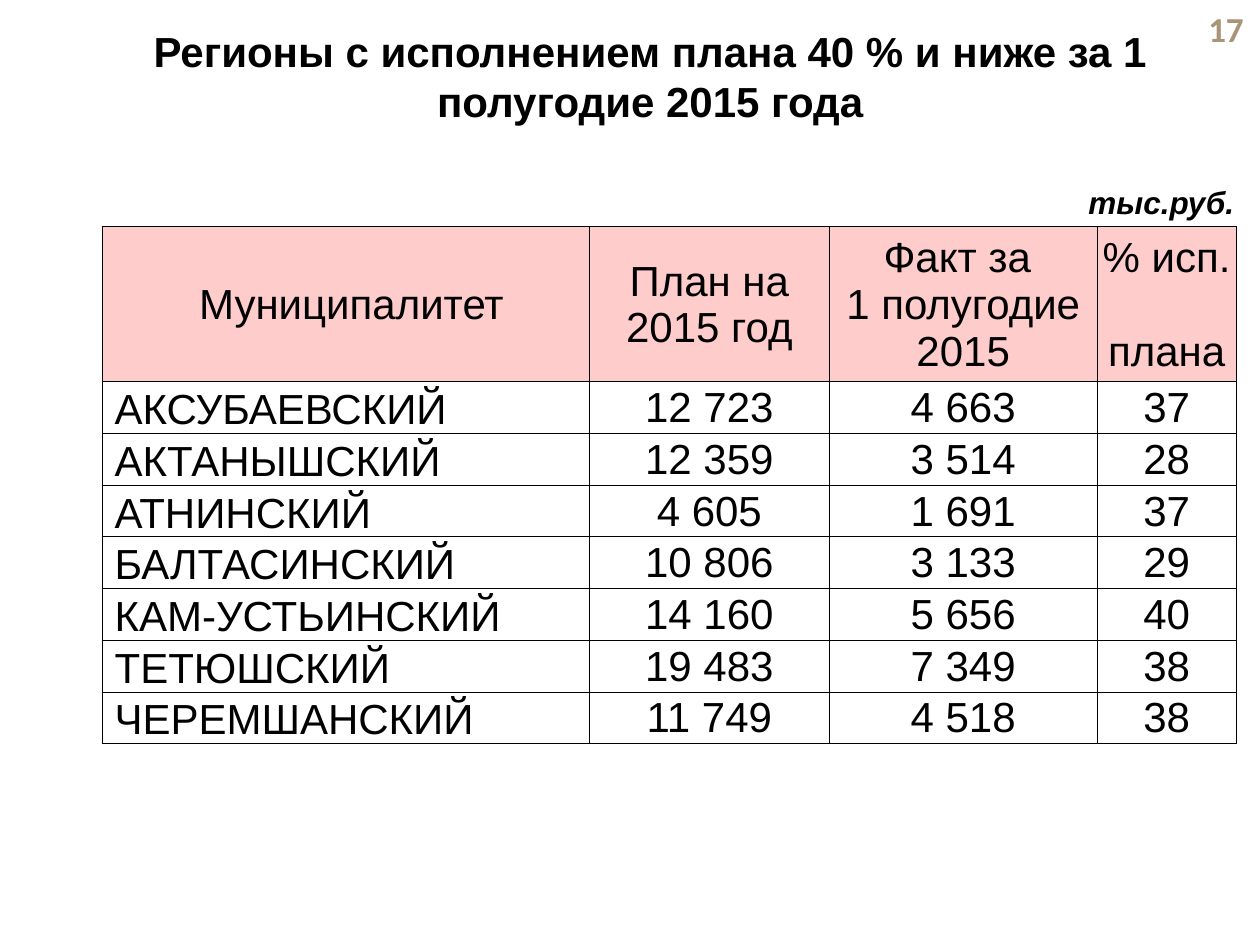
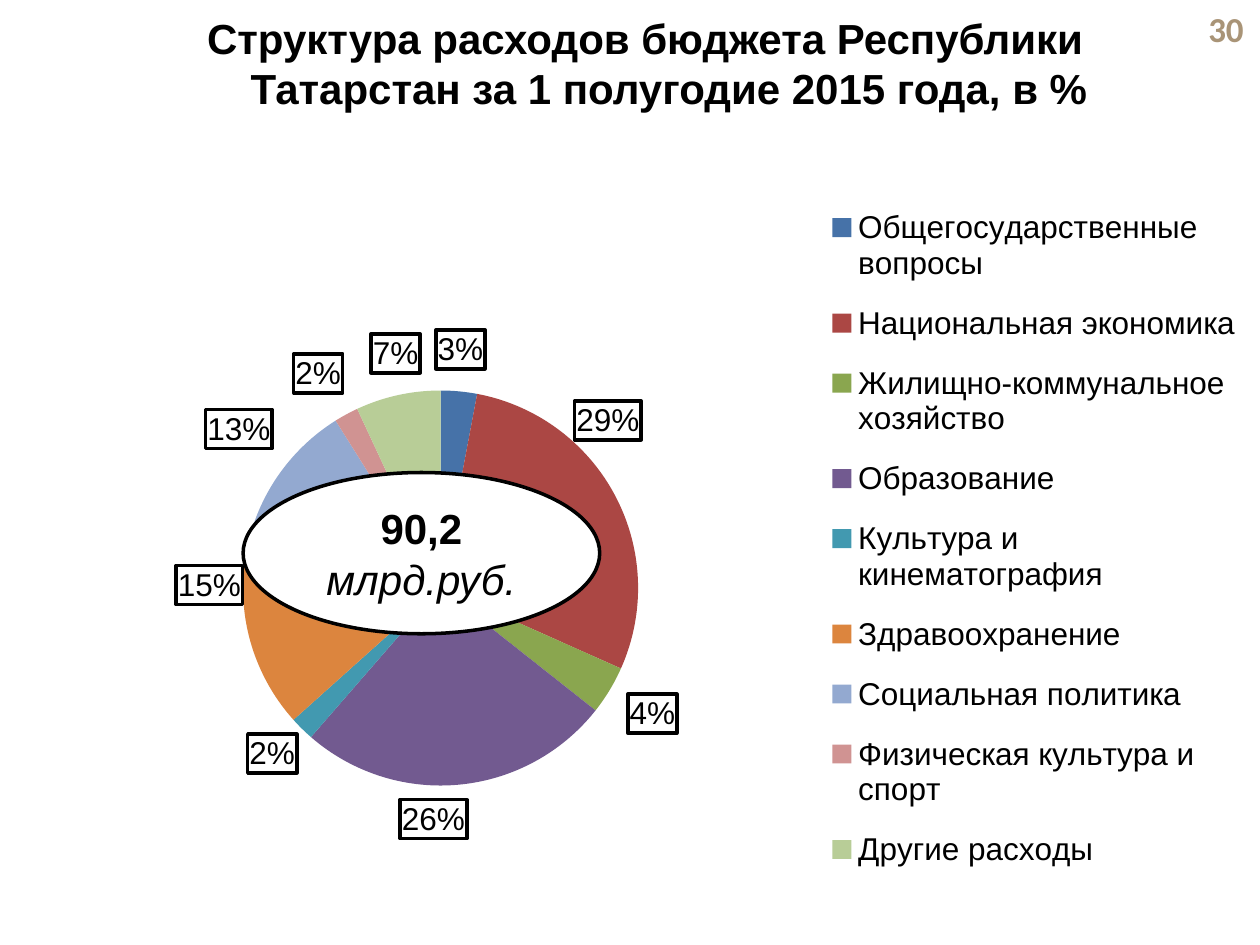
from dataclasses import dataclass

from pptx import Presentation
from pptx.chart.data import CategoryChartData
from pptx.dml.color import RGBColor
from pptx.enum import chart as charts, shapes, text
from pptx.oxml import parse_xml
from pptx.oxml.ns import nsdecls, qn
from pptx.util import Inches, Pt


@dataclass(frozen=True)
class Theme:
    font: str = "Arial"
    page_font: str = "Calibri"
    ink: str = "000000"
    paper: str = "FFFFFF"
    head: str = "FFCCCC"
    page: str = "A99477"
    big: int = 24
    mid: int = 20
    small: int = 18
    slices: tuple = ("4672A8", "AB4744", "8AA64F", "725A90", "4299B0",
                     "DC853E", "93A9D0", "D09392", "B8CD97")


THEME = Theme()
CENTER, RIGHT = text.PP_ALIGN.CENTER, text.PP_ALIGN.RIGHT
MIDDLE, BOTTOM = text.MSO_ANCHOR.MIDDLE, text.MSO_ANCHOR.BOTTOM

HEADS = ("Муниципалитет", "План на 2015 год",
         "Факт за \v1 полугодие 2015", "% исп. \vплана")
REGIONS = (
    ("АКСУБАЕВСКИЙ", "12 723", "4 663", "37"),
    ("АКТАНЫШСКИЙ", "12 359", "3 514", "28"),
    ("АТНИНСКИЙ", "4 605", "1 691", "37"),
    ("БАЛТАСИНСКИЙ", "10 806", "3 133", "29"),
    ("КАМ-УСТЬИНСКИЙ", "14 160", "5 656", "40"),
    ("ТЕТЮШСКИЙ", "19 483", "7 349", "38"),
    ("ЧЕРЕМШАНСКИЙ", "11 749", "4 518", "38"),
)
COSTS = {
    "Общегосударственные вопросы": 3,
    "Национальная экономика": 29,
    "Жилищно-коммунальное хозяйство": 4,
    "Образование": 26,
    "Культура и кинематография": 2,
    "Здравоохранение": 15,
    "Социальная политика": 13,
    "Физическая культура и спорт": 2,
    "Другие расходы": 7,
}
# Label shifts by slice, as shares of the chart's width and height
SHIFTS = {0: (-0.02, -0.02), 1: (-0.04, -0.07), 2: (0.01, 0),
          3: (-0.05, 0.01), 5: (0, -0.1), 6: (0, -0.03), 7: (0, -0.02),
          8: (0.02, -0.02)}


def rgb(code):
    return RGBColor.from_string(code)


def style(font, size=THEME.big, color=THEME.ink, name=THEME.font, **extra):
    look = dict(size=Pt(size), name=name, **extra)
    for key, value in look.items():
        setattr(font, key, value)
    font.color.rgb = rgb(color)


def size_breaks(para):
    """Give line breaks the size of the text around them."""
    for gap in para._p.findall(qn("a:br")):
        gap.insert(0, parse_xml(
            f'<a:rPr {nsdecls("a")} sz="{THEME.big * 100}">'
            f'<a:latin typeface="{THEME.font}"/></a:rPr>'))


def label(slide, box, words, align=None, anchor=None, wrap=True, hang=0,
          **look):
    """Text box with one paragraph; hang is its hanging indent in inches."""
    frame = slide.shapes.add_textbox(*map(Inches, box)).text_frame
    frame.word_wrap = wrap
    frame.vertical_anchor = anchor
    para = frame.paragraphs[0]
    para.alignment = align
    if hang:
        props = para._p.get_or_add_pPr()
        props.set("marL", str(Inches(hang)))
        props.set("indent", str(-Inches(hang)))
    run = para.add_run()
    run.text = words
    style(run.font, **look)


def title(slide, box, words, hang=0):
    label(slide, box, words, CENTER, hang=hang, bold=True)


def number(slide, page):
    label(slide, (9.33, 0.06, 0.64, 0.34), page, RIGHT, MIDDLE, hang=0.38,
          size=THEME.mid, color=THEME.page, name=THEME.page_font, bold=True)


def border(cell):
    props = cell._tc.get_or_add_tcPr()
    for spot, side in enumerate("LRTB"):
        props.insert(spot, parse_xml(
            f'<a:ln{side} {nsdecls("a")} w="{Pt(0.5)}"><a:solidFill>'
            f'<a:srgbClr val="{THEME.ink}"/></a:solidFill></a:ln{side}>'))


def fill_cell(cell, words, first, head):
    edge = Inches(0.01)
    look = dict(margin_left=Inches(0.1) if first else edge, margin_right=edge,
                margin_top=edge, margin_bottom=0,
                vertical_anchor=BOTTOM if first and not head else MIDDLE)
    for key, value in look.items():
        setattr(cell, key, value)
    cell.text = words
    para = cell.text_frame.paragraphs[0]
    para.alignment = None if first and not head else CENTER
    for run in para.runs:
        style(run.font)
    size_breaks(para)
    cell.fill.solid()
    cell.fill.fore_color.rgb = rgb(THEME.head if head else THEME.paper)
    border(cell)


def grid(slide, spot, widths, tall, low, rows):
    """Table with a header of height tall and body rows of height low."""
    table = slide.shapes.add_table(
        len(rows), len(widths), *map(Inches, spot), Inches(sum(widths)),
        Inches(tall + low * (len(rows) - 1))).table
    for col, width in zip(table.columns, widths):
        col.width = Inches(width)
    for r, row in enumerate(rows):
        table.rows[r].height = Inches(low if r else tall)
        for c, words in enumerate(row):
            fill_cell(table.cell(r, c), words, c == 0, r == 0)


def place(x, y, w=None, h=None, inner=False):
    """Manual chart layout; without w and h it is a shift."""
    parts = [("layoutTarget", "inner")] if inner else []
    if w:
        parts += [("xMode", "edge"), ("yMode", "edge")]
    parts += [("x", x), ("y", y)]
    if w:
        parts += [("w", w), ("h", h)]
    tags = "".join(f'<c:{tag} val="{val}"/>' for tag, val in parts)
    return (f'<c:layout {nsdecls("c")}><c:manualLayout>{tags}'
            '</c:manualLayout></c:layout>')


def tag_slices(series):
    """Boxed percent labels outside the pie, some of them shifted."""
    shows = "".join(
        f'<c:show{what} val="{int(what == "Percent")}"/>' for what in
        ("LegendKey", "Val", "CatName", "SerName", "Percent", "BubbleSize"))
    body = (
        '<c:numFmt formatCode="0%" sourceLinked="0"/><c:spPr><a:solidFill>'
        f'<a:srgbClr val="{THEME.paper}"/></a:solidFill><a:ln w="{Pt(2)}">'
        f'<a:solidFill><a:srgbClr val="{THEME.ink}"/></a:solidFill></a:ln>'
        f'</c:spPr><c:dLblPos val="outEnd"/>{shows}')
    moved = "".join(f'<c:dLbl><c:idx val="{i}"/>{place(*shift)}{body}</c:dLbl>'
                    for i, shift in SHIFTS.items())
    series._element.find(qn("c:cat")).addprevious(parse_xml(
        f'<c:dLbls {nsdecls("c", "a")}>{moved}{body}'
        '<c:showLeaderLines val="0"/></c:dLbls>'))


def set_place(node, after, layout):
    """Replace the layout of a chart part; after is the tag it follows."""
    old = node.find(qn("c:layout"))
    if old is not None:
        node.remove(old)
    new = parse_xml(layout)
    prior = node.find(qn(after)) if after else None
    if prior is None:
        node.insert(0, new)
    else:
        prior.addnext(new)


def pie(slide, box, costs):
    data = CategoryChartData()
    data.categories = list(costs)
    data.add_series("Расходы", list(costs.values()))
    chart = slide.shapes.add_chart(charts.XL_CHART_TYPE.PIE,
                                   *map(Inches, box), data).chart
    style(chart.font, size=THEME.small)
    chart.has_title = False
    chart.has_legend = True
    legend = chart.legend
    legend.position = charts.XL_LEGEND_POSITION.RIGHT
    legend.include_in_layout = False
    style(legend.font, size=THEME.small)
    set_place(legend._element, "c:legendPos", place(0.66, 0.05, 0.34, 0.93))
    area = chart._chartSpace.chart.plotArea
    set_place(area, None, place(0.09, 0.32, 0.45, 0.52, inner=True))
    plot = chart.plots[0]
    plot.vary_by_categories = True
    series = plot.series[0]
    for i, color in enumerate(THEME.slices):
        shade = series.points[i].format.fill
        shade.solid()
        shade.fore_color.rgb = rgb(color)
    tag_slices(series)


def total(slide, box, amount, unit):
    oval = slide.shapes.add_shape(shapes.MSO_SHAPE.OVAL, *map(Inches, box))
    oval.shadow.inherit = False
    oval.fill.solid()
    oval.fill.fore_color.rgb = rgb(THEME.paper)
    oval.line.color.rgb = rgb(THEME.ink)
    oval.line.width = Pt(2)
    para = oval.text_frame.paragraphs[0]
    para.alignment = CENTER
    for words, look in ((amount, {"bold": True}), (unit, {"italic": True})):
        if para.runs:
            para.add_line_break()
        run = para.add_run()
        run.text = words
        style(run.font, **look)
    size_breaks(para)


def main():
    deck = Presentation()
    deck.slide_width, deck.slide_height = Inches(10), Inches(7.5)
    blank = deck.slide_layouts[6]

    plan = deck.slides.add_slide(blank)
    title(plan, (0.75, 0.15, 8.82, 1.23),
          "Регионы с исполнением плана 40 % и ниже за 1 полугодие 2015 года")
    label(plan, (8.54, 1.4, 1.37, 0.4), "тыс.руб.", wrap=False,
          size=THEME.small, bold=True, italic=True)
    number(plan, "17")
    grid(plan, (0.81, 1.8), (3.87, 1.9, 2.13, 1.1), 1.23, 0.41,
         (HEADS, *REGIONS))

    spend = deck.slides.add_slide(blank)
    title(spend, (0.67, 0.05, 8.9, 1),
          "Структура расходов бюджета Республики Татарстан "
          "за 1 полугодие 2015 года, в %", hang=0.38)
    pie(spend, (0.52, 1.17, 9.45, 6.03), COSTS)
    total(spend, (1.93, 3.75, 2.83, 1.28), "90,2", "млрд.руб.")
    number(spend, "30")

    deck.save("out.pptx")


if __name__ == "__main__":
    main()
